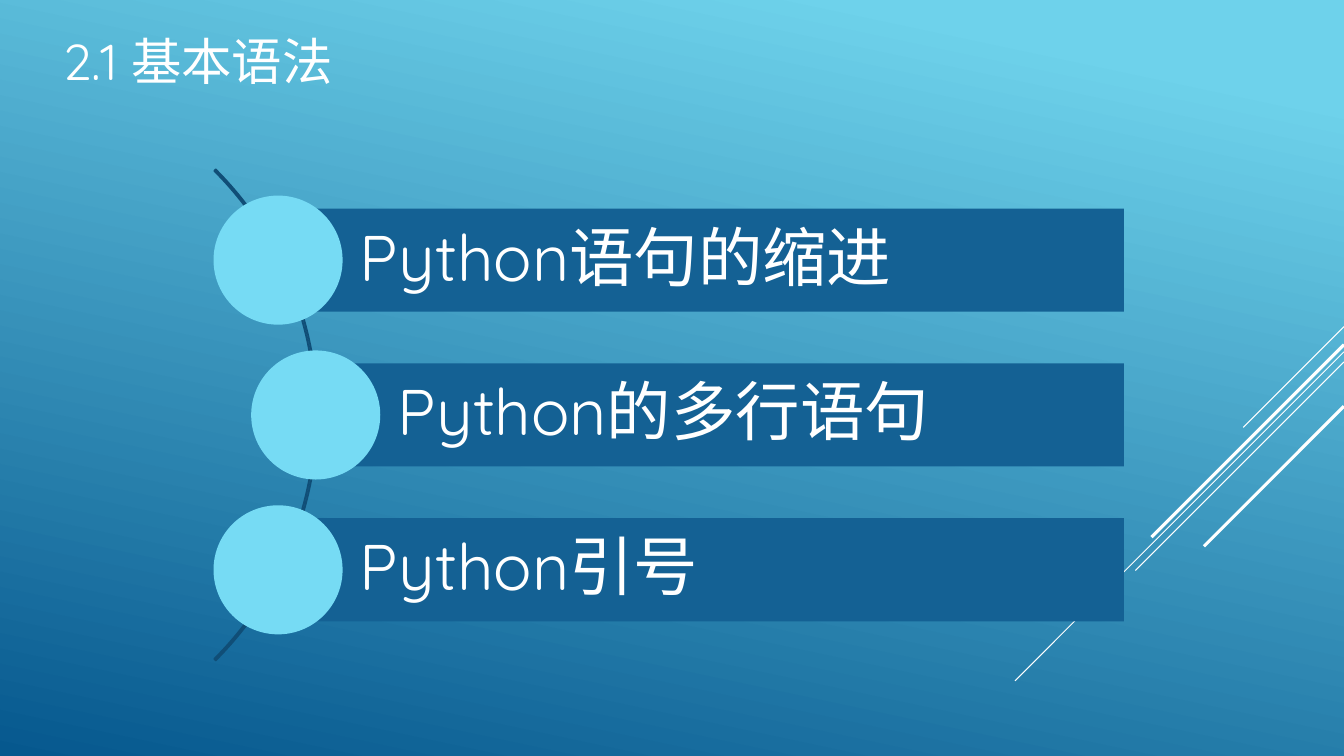
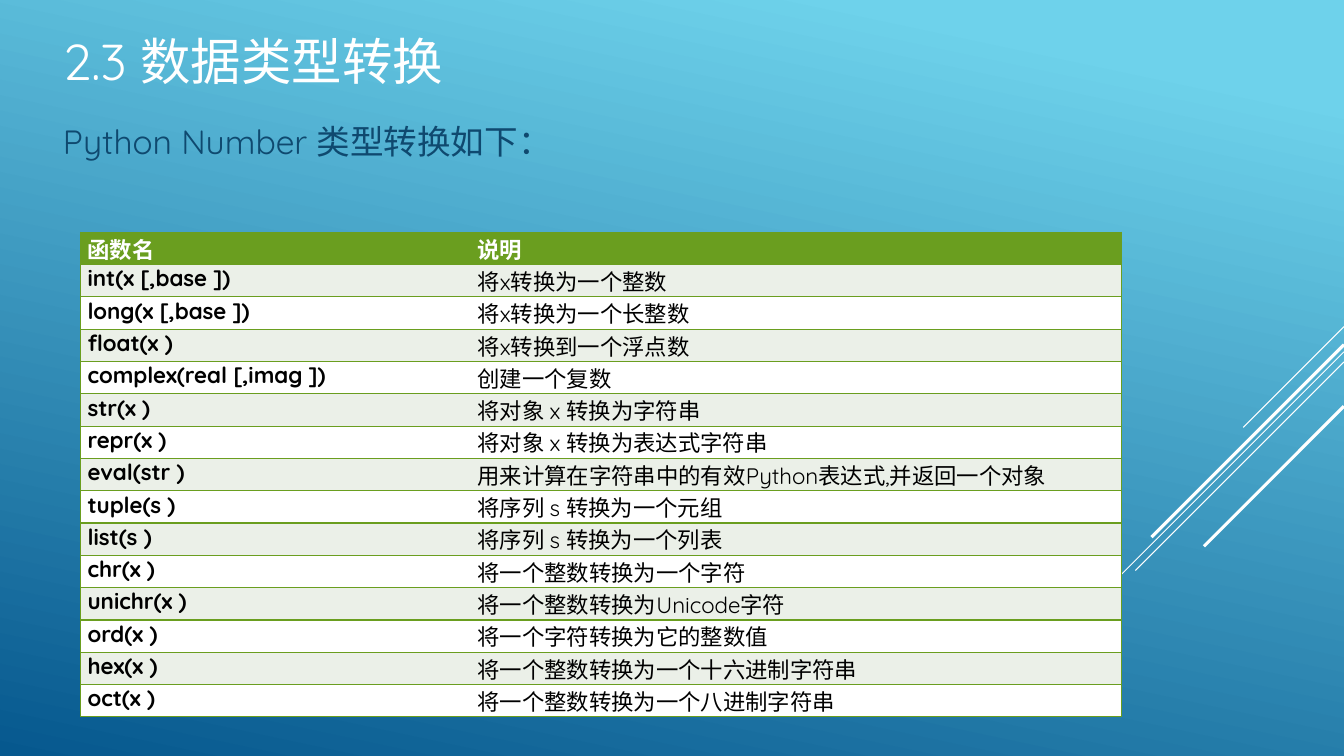
from pptx import Presentation
from pptx.dml.color import RGBColor
from pptx.enum.shapes import MSO_CONNECTOR, MSO_SHAPE
from pptx.enum.text import MSO_ANCHOR as ANCHOR, PP_ALIGN as ALIGN
from pptx.oxml import parse_xml
from pptx.oxml.ns import nsdecls
from pptx.util import Pt

FONT = "Quicksand"
SLIDE_WIDTH, SLIDE_HEIGHT = 960, 540
TEXT_LEFT, TEXT_WIDTH = 37.8, 672
WHITE, BLACK = "FFFFFF", "000000"
SKY, OCEAN = "6ED2EB", "06588E"
BAR_BLUE, DOT_BLUE, ARC_BLUE, LEAD_BLUE = "146194", "76DBF4", "104E77", "0F496F"
GREEN, PALE_GREEN = "6A9E1F", "EBF0E8"

# Diagonal stripes at 45 degrees from the right edge: start height, run, width
STRIPES = [(233.3, 72, 0.75), (251.3, 235, 0.75), (258.5, 149, 0.75),
           (246.2, 137.5, 2.25), (290.2, 100, 2.25)]

TOPICS = ["Python语句的缩进", "Python的多行语句", "Python引号"]

CONVERSIONS = [
    ("函数名", "说明"),
    ("int(x [,base ])", "将x转换为一个整数"),
    ("long(x [,base ])", "将x转换为一个长整数"),
    ("float(x )", "将x转换到一个浮点数"),
    ("complex(real [,imag ])", "创建一个复数"),
    ("str(x )", "将对象 x 转换为字符串"),
    ("repr(x )", "将对象 x 转换为表达式字符串"),
    ("eval(str )", "用来计算在字符串中的有效Python表达式,并返回一个对象"),
    ("tuple(s )", "将序列 s 转换为一个元组"),
    ("list(s )", "将序列 s 转换为一个列表"),
    ("chr(x )", "将一个整数转换为一个字符"),
    ("unichr(x )", "将一个整数转换为Unicode字符"),
    ("ord(x )", "将一个字符转换为它的整数值"),
    ("hex(x )", "将一个整数转换为一个十六进制字符串"),
    ("oct(x )", "将一个整数转换为一个八进制字符串"),
]


def color(hex_code):
    return RGBColor.from_string(hex_code)


def write(frame, text, size, ink=WHITE, bold=False, align=ALIGN.LEFT,
          anchor=ANCHOR.TOP, insets=(7.2, 3.6, 7.2, 3.6), spacing=None):
    """Fill a text frame with one formatted paragraph."""
    frame.word_wrap = True
    frame.vertical_anchor = anchor
    (frame.margin_left, frame.margin_top,
     frame.margin_right, frame.margin_bottom) = map(Pt, insets)
    paragraph = frame.paragraphs[0]
    paragraph.alignment = align
    if spacing:
        paragraph.line_spacing = spacing
    run = paragraph.add_run()
    run.text = text
    run.font.name = FONT
    run.font.size = Pt(size)
    run.font.bold = bold
    run.font.color.rgb = color(ink)


def add_label(slide, text, top, height, **style):
    box = slide.shapes.add_textbox(*map(Pt, (TEXT_LEFT, top, TEXT_WIDTH, height)))
    write(box.text_frame, text, **style)


def add_figure(slide, preset, box, fill=None, line=None):
    figure = slide.shapes.add_shape(preset, *map(Pt, box))
    figure.shadow.inherit = False
    if fill:
        figure.fill.solid()
        figure.fill.fore_color.rgb = color(fill)
    else:
        figure.fill.background()
    if line:
        figure.line.color.rgb = color(line)
        figure.line.width = Pt(1.25)
    else:
        figure.line.fill.background()
    return figure


def add_stripe(slide, top, run, width):
    stripe = slide.shapes.add_connector(
        MSO_CONNECTOR.STRAIGHT, Pt(SLIDE_WIDTH), Pt(top),
        Pt(SLIDE_WIDTH - run), Pt(top + run))
    stripe.line.color.rgb = color(WHITE)
    stripe.line.width = Pt(width)
    stripe._element.spPr.append(parse_xml(f"<a:effectLst {nsdecls('a')}/>"))


def paint_background(master):
    fill = master.background.fill
    fill.gradient()
    fill.gradient_angle = 258
    for stop, (position, shade) in zip(fill.gradient_stops,
                                       [(0.1, SKY), (1, OCEAN)]):
        stop.position = position
        stop.color.rgb = color(shade)


def add_titled_slide(prs, title):
    slide = prs.slides.add_slide(prs.slide_layouts[6])
    for stripe in STRIPES:
        add_stripe(slide, *stripe)
    add_label(slide, title, 6.5, 62, size=36, anchor=ANCHOR.BOTTOM)
    return slide


def add_topic_list(slide, topics):
    """Bars with dots, strung along an arc."""
    arc_size, arc_left, middle = 496, -269.3, 296.4
    pitch, dot, bar_height, bar_right = 110.6, 92.2, 73.7, 802.8
    arc = add_figure(slide, MSO_SHAPE.BLOCK_ARC,
                     (arc_left, middle - arc_size / 2, arc_size, arc_size),
                     line=ARC_BLUE)
    for index, value in enumerate((189, 27, 0.003)):
        arc.adjustments[index] = value
    for index, topic in enumerate(topics):
        center_x = 225.5 if index % 2 else 198.6
        center_y = middle + (index - 1) * pitch
        bar = add_figure(slide, MSO_SHAPE.RECTANGLE,
                         (center_x, center_y - bar_height / 2,
                          bar_right - center_x, bar_height), fill=BAR_BLUE)
        write(bar.text_frame, topic, size=46, anchor=ANCHOR.MIDDLE,
              insets=(58.5, 9.4, 9.4, 9.4), spacing=0.9)
        add_figure(slide, MSO_SHAPE.OVAL,
                   (center_x - dot / 2, center_y - dot / 2, dot, dot),
                   fill=DOT_BLUE)


def set_borders(cell, sides):
    """Draw green lines on the given sides and none on the others."""
    properties = cell._tc.get_or_add_tcPr()
    green = f'<a:solidFill><a:srgbClr val="{GREEN}"/></a:solidFill>'
    for index, side in enumerate("LRTB"):
        paint = green if side in sides else "<a:noFill/>"
        properties.insert(index, parse_xml(
            f'<a:ln{side} {nsdecls("a")} w="{Pt(1)}">{paint}</a:ln{side}>'))


def add_conversion_table(slide, rows):
    row_height, widths = 23.08, (278.6, 465.1)
    table = slide.shapes.add_table(
        len(rows), len(widths), Pt(57.6), Pt(165.9),
        Pt(sum(widths)), Pt(row_height * len(rows))).table
    for column, width in zip(table.columns, widths):
        column.width = Pt(width)
    for r, texts in enumerate(rows):
        table.rows[r].height = Pt(row_height)
        header = r == 0
        fill = GREEN if header else PALE_GREEN if r % 2 else WHITE
        for c, text in enumerate(texts):
            cell = table.cell(r, c)
            write(cell.text_frame, text, size=16, align=ALIGN.JUSTIFY,
                  ink=WHITE if header else BLACK, bold=header or c == 0)
            cell.margin_left = cell.margin_right = Pt(5)
            cell.margin_top = cell.margin_bottom = 0
            cell.fill.solid()
            cell.fill.fore_color.rgb = color(fill)
            set_borders(cell, "RTB" if c else "LTB")


def main():
    prs = Presentation()
    prs.slide_width, prs.slide_height = Pt(SLIDE_WIDTH), Pt(SLIDE_HEIGHT)
    paint_background(prs.slide_master)

    add_topic_list(add_titled_slide(prs, "2.1 基本语法"), TOPICS)

    conversion = add_titled_slide(prs, "2.3 数据类型转换")
    add_label(conversion, "Python Number 类型转换如下：", 82.8, 48,
              size=24, ink=LEAD_BLUE)
    add_conversion_table(conversion, CONVERSIONS)

    prs.save("out.pptx")


if __name__ == "__main__":
    main()
